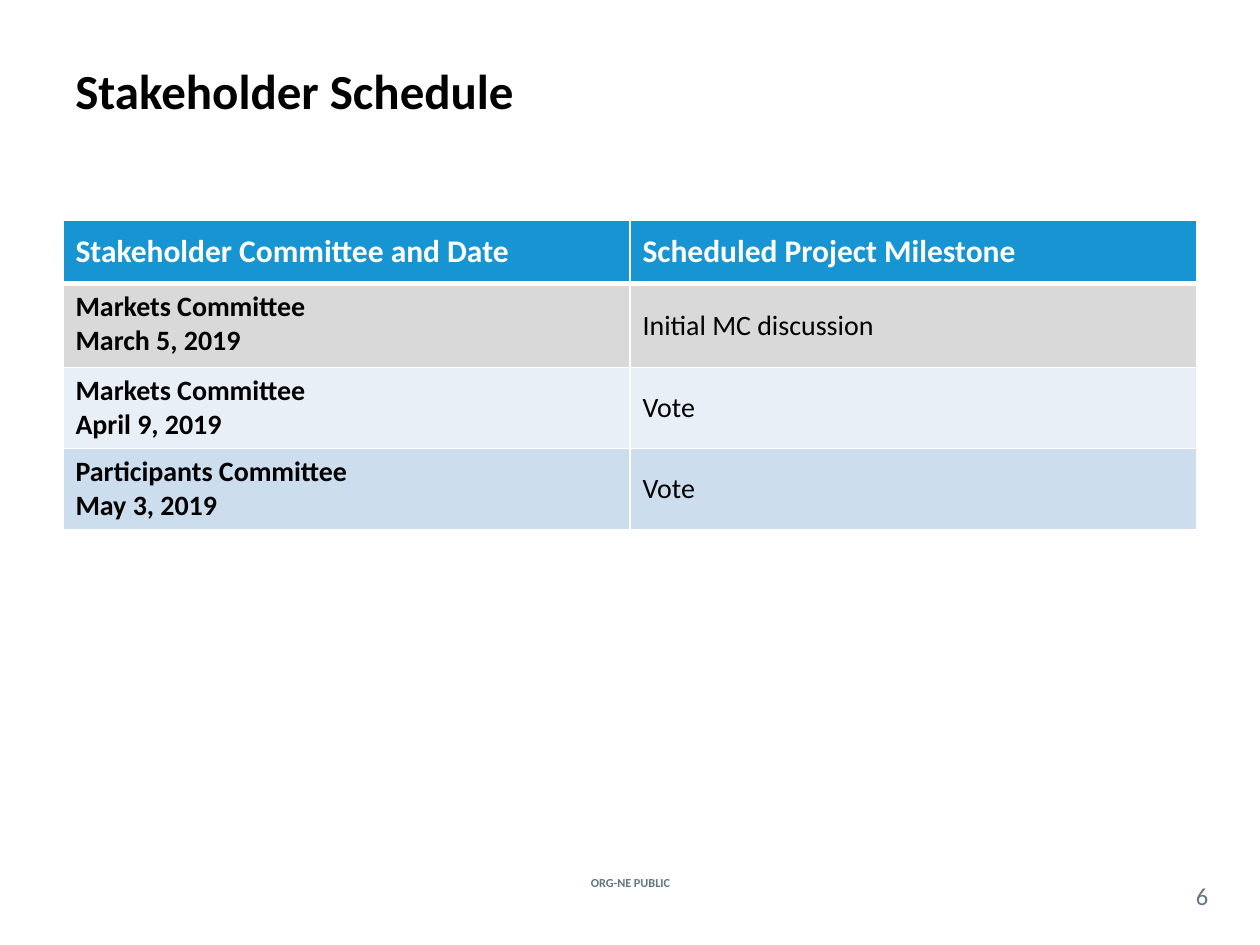
from lxml import etree
from pptx import Presentation
from pptx.dml.color import RGBColor
from pptx.enum.text import MSO_ANCHOR, PP_ALIGN
from pptx.oxml.ns import qn
from pptx.util import Pt

LEFT, CENTER = PP_ALIGN.LEFT, PP_ALIGN.CENTER
TOP, MIDDLE = MSO_ANCHOR.TOP, MSO_ANCHOR.MIDDLE
FONT = "Calibri"
COLORS = {
    "black": "000000",
    "white": "FFFFFF",
    "slate": "62777F",
    "header": "1795D2",
    "gray": "D9D9D9",
    "pale": "E8EFF7",
    "blue": "CCDDEE",
}
HEADINGS = ("Stakeholder Committee and Date", "Scheduled Project Milestone")
MILESTONES = [
    ("Markets Committee\nMarch 5, 2019", "Initial MC discussion", "gray"),
    ("Markets Committee\nApril 9, 2019", "Vote", "pale"),
    ("Participants Committee\nMay 3, 2019", "Vote", "blue"),
]
COLUMN_WIDTH = 324
ROW_HEIGHTS = (36, 48, 46.4, 46.4)


def rgb(name):
    return RGBColor.from_string(COLORS[name])


class SlideBuilder:
    def __init__(self, slide):
        self.slide = slide

    def fill_text(self, frame, text, size, color, bold=False, align=LEFT):
        frame.text = text
        for para in frame.paragraphs:
            para.alignment = align
            para.font.name = FONT
            para.font.size = Pt(size)
            para.font.bold = bold
            para.font.color.rgb = rgb(color)

    def text(self, text, left, top, width, height, size, color,
             bold=False, align=LEFT, margins=(7.2, 3.6)):
        box = self.slide.shapes.add_textbox(Pt(left), Pt(top), Pt(width), Pt(height))
        frame = box.text_frame
        frame.word_wrap = True
        frame.vertical_anchor = MIDDLE
        frame.margin_left = frame.margin_right = Pt(margins[0])
        frame.margin_top = frame.margin_bottom = Pt(margins[1])
        self.fill_text(frame, text, size, color, bold, align)

    def borders(self, cell, top, bottom):
        properties = cell._tc.get_or_add_tcPr()
        for side, width in (("L", 1), ("R", 1), ("T", top), ("B", bottom)):
            line = etree.SubElement(properties, qn(f"a:ln{side}"), w=str(Pt(width)))
            fill = etree.SubElement(line, qn("a:solidFill"))
            etree.SubElement(fill, qn("a:srgbClr"), val=COLORS["white"])

    def cell(self, cell, text, size, color, fill, bold, anchor, top=1, bottom=1):
        self.borders(cell, top, bottom)
        cell.fill.solid()
        cell.fill.fore_color.rgb = rgb(fill)
        cell.vertical_anchor = anchor
        self.fill_text(cell.text_frame, text, size, color, bold)

    def schedule(self, left, top):
        frame = self.slide.shapes.add_table(
            len(ROW_HEIGHTS), len(HEADINGS), Pt(left), Pt(top),
            Pt(COLUMN_WIDTH * len(HEADINGS)), Pt(sum(ROW_HEIGHTS)))
        table = frame.table
        for column in table.columns:
            column.width = Pt(COLUMN_WIDTH)
        for row, height in zip(table.rows, ROW_HEIGHTS):
            row.height = Pt(height)
        for column, heading in enumerate(HEADINGS):
            self.cell(table.cell(0, column), heading, 18, "white", "header",
                      True, MIDDLE, bottom=3)
        for row, (committee, milestone, fill) in enumerate(MILESTONES, 1):
            rule = 3 if row == 1 else 1
            self.cell(table.cell(row, 0), committee, 16, "black", fill,
                      True, TOP, top=rule)
            self.cell(table.cell(row, 1), milestone, 16, "black", fill,
                      False, MIDDLE, top=rule)


def main():
    deck = Presentation()
    deck.slide_width, deck.slide_height = Pt(720), Pt(540)
    page = SlideBuilder(deck.slides.add_slide(deck.slide_layouts[6]))
    page.text("ORG-NE PUBLIC", 307.4, 498.2, 105.8, 12.2, 7, "slate", True, CENTER)
    page.text("Stakeholder Schedule", 36, 30.2, 648, 41.8, 28, "black", True)
    page.text("6", 671.8, 501.1, 30.2, 20.9, 14, "slate", align=CENTER, margins=(0, 0))
    page.schedule(36, 126)
    deck.save("out.pptx")


if __name__ == "__main__":
    main()
